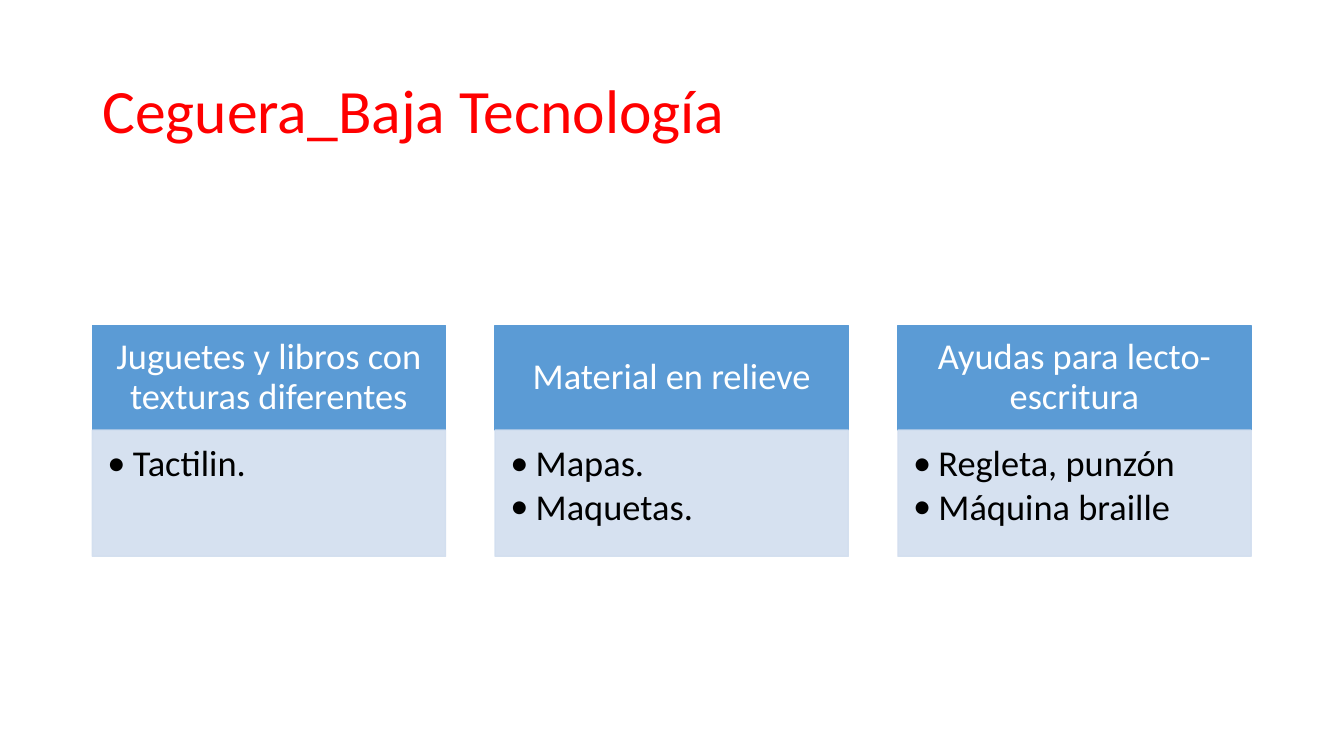
from lxml.etree import SubElement
from pptx import Presentation
from pptx.dml.color import RGBColor
from pptx.enum.shapes import MSO_SHAPE as Shape
from pptx.enum.text import MSO_ANCHOR as Anchor, PP_ALIGN as Align
from pptx.oxml.ns import qn
from pptx.util import Cm, Pt

# Content
TITLE = "Ceguera_Baja Tecnología"
CARDS = [
    ("Juguetes y libros con texturas diferentes", ["Tactilin."]),
    ("Material en relieve", ["Mapas.", "Maquetas."]),
    ("Ayudas para lecto-escritura", ["Regleta, punzón", "Máquina braille"]),
]

# Colours
RED = RGBColor(0xFF, 0x00, 0x00)
BLUE = RGBColor(0x5B, 0x9B, 0xD5)
PALE = RGBColor(0xD2, 0xDE, 0xEF)
WHITE = RGBColor(0xFF, 0xFF, 0xFF)
BLACK = RGBColor(0x00, 0x00, 0x00)

# Layout in centimetres
LEFT, TOP = 2.33, 8.2
WIDTH, PITCH = 8.9, 10.15
HEAD, BODY = 2.64, 3.18
INDENT = 0.64

# Formats: margins are left, top, right, bottom
TITLE_FMT = dict(
    frame=dict(vertical_anchor=Anchor.MIDDLE),
    margins=(0.25, 0.13, 0.25, 0.13),
    para=dict(line_spacing=0.9),
    font=dict(size=Pt(44), name="Calibri"), ink=RED)
HEAD_FMT = dict(
    frame=dict(vertical_anchor=Anchor.MIDDLE),
    margins=(0.5, 0.3, 0.5, 0.3),
    para=dict(line_spacing=0.9, alignment=Align.CENTER),
    font=dict(size=Pt(26), name="Calibri"), ink=WHITE)
BODY_FMT = dict(
    frame=dict(vertical_anchor=Anchor.TOP),
    margins=(0.38, 0.38, 0.5, 0.58),
    para=dict(line_spacing=0.9, alignment=Align.LEFT, space_after=Pt(3)),
    font=dict(size=Pt(26), name="Calibri"), ink=BLACK)


def assign(target, values):
    for key, value in values.items():
        setattr(target, key, value)


def write(shape, lines, fmt, bullet=False):
    frame = shape.text_frame
    frame.word_wrap = True
    assign(frame, fmt["frame"])
    for side, size in zip(("left", "top", "right", "bottom"), fmt["margins"]):
        setattr(frame, f"margin_{side}", Cm(size))
    frame.text = "\n".join(lines)
    for para in frame.paragraphs:
        assign(para, fmt["para"])
        font = para.runs[0].font
        assign(font, fmt["font"])
        font.color.rgb = fmt["ink"]
        if bullet:
            props = para._p.get_or_add_pPr()
            props.set("marL", str(Cm(INDENT)))
            props.set("indent", str(-Cm(INDENT)))
            SubElement(props, qn("a:buFont"), typeface="Calibri")
            SubElement(props, qn("a:buChar"), char="•")


def add_box(slide, left, top, height, color, alpha=None):
    box = slide.shapes.add_shape(
        Shape.RECTANGLE, Cm(left), Cm(top), Cm(WIDTH), Cm(height))
    box.shadow.inherit = False
    box.fill.solid()
    box.line.width = Pt(1)
    for paint in (box.fill.fore_color, box.line.color):
        paint.rgb = color
    if alpha:
        for tint in box._element.spPr.iter(qn("a:srgbClr")):
            SubElement(tint, qn("a:alpha"), val=str(alpha * 1000))
    return box


def main():
    deck = Presentation()
    deck.slide_width, deck.slide_height = Cm(33.87), Cm(19.05)
    slide = deck.slides.add_slide(deck.slide_layouts[6])

    # Title
    title = slide.shapes.add_textbox(Cm(LEFT), Cm(1.01), Cm(29.21), Cm(3.68))
    write(title, [TITLE], TITLE_FMT)

    # Cards: heading above a bulleted list
    for col, (name, items) in enumerate(CARDS):
        left = LEFT + col * PITCH
        head = add_box(slide, left, TOP, HEAD, BLUE)
        write(head, [name], HEAD_FMT)
        body = add_box(slide, left, TOP + HEAD, BODY, PALE, alpha=90)
        write(body, items, BODY_FMT, bullet=True)

    deck.save("out.pptx")


if __name__ == "__main__":
    main()
